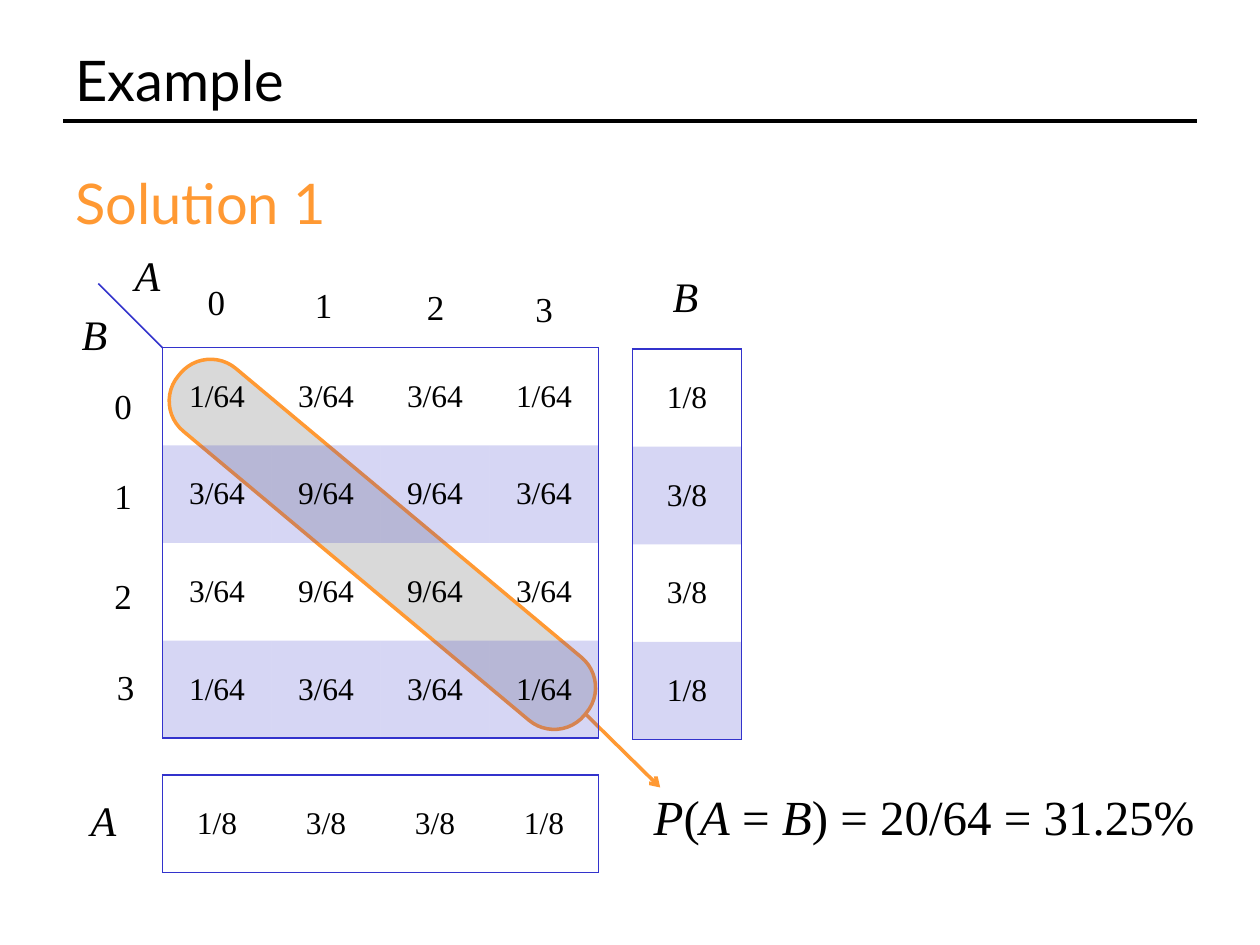
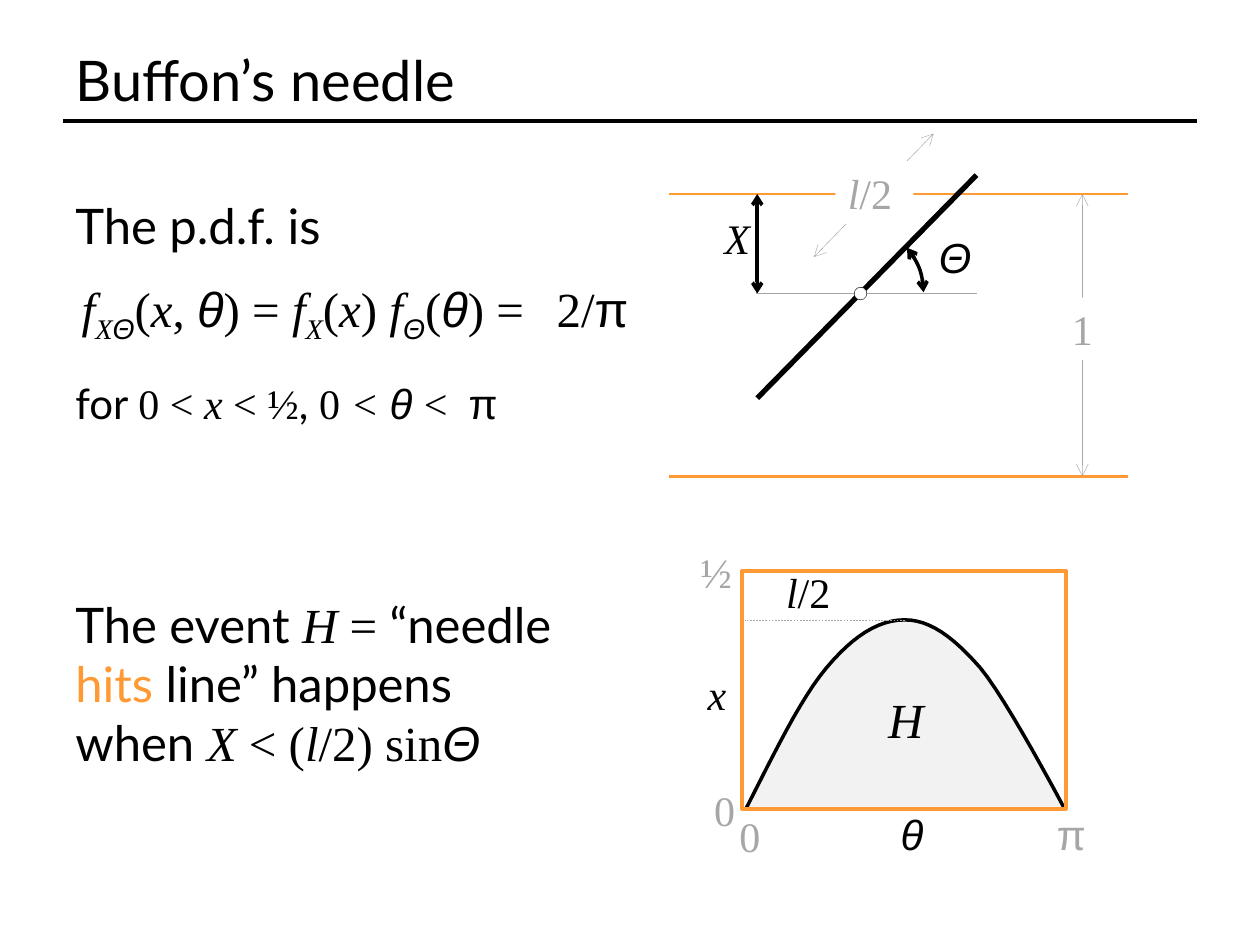
"""Build two probability slides: a joint table and Buffon's needle."""
from lxml.etree import SubElement
from pptx import Presentation
from pptx.dml.color import RGBColor
from pptx.enum.dml import MSO_LINE
from pptx.enum.shapes import MSO_CONNECTOR, MSO_SHAPE
from pptx.enum.text import MSO_ANCHOR, PP_ALIGN
from pptx.oxml.ns import qn
from pptx.util import Inches, Pt

WIDE, HIGH = 10, 7.5
EDGE = WIDE * 0.05
COL, ROW = 3.46 / 4, 3.1 / 4
GRID = (1.29, 2.76)
BLACK, WHITE, GREY = "000000", "FFFFFF", "A6A6A6"
ORANGE, BLUE = "FF9933", "3333CC"
PLAIN = "{2D5ABB26-0587-4C30-8999-92F81FD0307C}"
FONTS = {"a": "Arial", "l": "Lato"}
TINTS = {"o": ORANGE, "g": GREY}
ALIGN = {"l": PP_ALIGN.LEFT, "c": PP_ALIGN.CENTER, "r": PP_ALIGN.RIGHT}

JOINT = [
    ["1/64", "3/64", "3/64", "1/64"],
    ["3/64", "9/64", "9/64", "3/64"],
    ["3/64", "9/64", "9/64", "3/64"],
    ["1/64", "3/64", "3/64", "1/64"],
]
EDGES = ["1/8", "3/8", "3/8", "1/8"]
HEADS = [(1.55, 2.18), (2.4, 2.2), (3.29, 2.22), (4.15, 2.23)]
SIDES = [(0.81, 3), (0.81, 3.72), (0.81, 4.51), (0.83, 5.23)]

# Runs pair text with flags: i italic, s subscript, a Arial, l Lato, o orange, g grey.
NOTES = [
    (EDGE, 1.29, 9, 0.64, "l", 32, [("Solution 1", "lo")]),
    (0.97, 1.93, 0.55, 0.5, "l", 24, [("A", "i")]),
    (0.55, 2.4, 0.47, 0.5, "l", 24, [("B", "i")]),
    (0.62, 6.26, 0.55, 0.5, "l", 24, [("A", "i")]),
    (5.24, 2.1, 0.47, 0.5, "l", 24, [("B", "i")]),
    (5.09, 6.19, 4.63, 0.57, "l", 28, [
        ("P", "i"), ("(", ""), ("A", "i"), (" = ", ""), ("B", "i"),
        (") = 20/64 = 31.25%", "")]),
]

PROSE = [
    (EDGE, 1.5, 4.53, 0.57, "l", 28, [("The p.d.f. is", "l")]),
    (0.55, 2.16, 3.89, 0.57, "l", 28, [
        ("f", "i"), ("X", "is"), ("Θ", "ias"), ("(", ""), ("x", "i"),
        (", ", ""), ("θ", "ia"), (") = ", ""), ("f", "i"), ("X", "is"),
        ("(", ""), ("x", "i"), (") ", ""), ("f", "i"), ("Θ", "ias"),
        ("(", ""), ("θ", "ia"), (") = ", "")]),
    (4.32, 2.16, 0.8, 0.57, "l", 28, [("2/", ""), ("π", "a")]),
    (EDGE, 2.95, 4.81, 0.5, "l", 24, [
        ("for ", "l"), ("0 < ", ""), ("x ", "i"), ("< ½", ""), (", ", "l"),
        ("0", ""), (" < ", "i"), ("θ ", "ia"), ("<  ", ""), ("π", "a")]),
    (EDGE, 4.67, 4.53, 1.51, "l", 28, [
        ("The event ", "l"), ("H", "i"), (" = ", ""), ("“needle ", "l"),
        ("\n", ""), ("hits ", "lo"), ("line” happens ", "l"), ("\n", ""),
        ("when ", "l"), ("X", "i"), (" < (", ""), ("l", "i"),
        ("/2) sin", ""), ("Θ", "ia")]),
]
MASKS = [
    (8.41, 2.36, 0.36, 0.5, "l", 24, [("1", "g")]),
    (6.63, 1.28, 0.62, 0.5, "l", 24, [("l", "ig"), ("/2", "g")]),
]
MARKS = [
    (5.52, 1.64, 0.53, 0.5, "r", 24, [("X", "i")]),
    (7.23, 1.79, 0.58, 0.5, "r", 24, [("Θ", "ia")]),
    (7.05, 6.37, 0.44, 0.5, "l", 24, [("θ", "ia")]),
    (5.49, 5.26, 0.4, 0.5, "c", 24, [("x", "i")]),
    (5.77, 6.38, 0.37, 0.37, "l", 24, [("0", "g")]),
    (8.29, 6.37, 0.39, 0.5, "l", 24, [("π", "ag")]),
    (5.46, 4.29, 0.48, 0.5, "l", 24, [("½", "g")]),
    (5.57, 6.18, 0.37, 0.37, "l", 24, [("0", "g")]),
    (6.95, 5.42, 0.55, 0.57, "l", 28, [("H", "i")]),
    (6.14, 4.45, 0.62, 0.5, "l", 24, [("l", "i"), ("/2", "")]),
]
LINES = [
    (5.31, 1.54, 8.95, 1.54, ORANGE, 1.5, ()),
    (5.31, 3.78, 8.95, 3.78, ORANGE, 1.5, ()),
    (6.01, 3.16, 7.75, 1.39, BLACK, 3, ()),
    (6.01, 1.54, 6.01, 2.33, BLACK, 2, ("head", "tail")),
    (8.59, 1.54, 8.59, 3.78, GREY, 0.25, ("head", "tail")),
    (7.41, 1.06, 6.46, 2.04, GREY, 0.25, ("head", "tail")),
    (7.75, 2.33, 6, 2.33, GREY, 0.25, ()),
]
CURVE = [
    [(5.92, 6.42), (6.14, 5.99), (6.35, 5.55), (6.56, 5.3)],
    [(6.56, 5.3), (6.77, 5.05), (6.97, 4.92), (7.18, 4.92)],
    [(7.18, 4.92), (7.38, 4.92), (7.56, 5.05), (7.78, 5.3)],
    [(7.78, 5.3), (7.99, 5.55), (8.45, 6.42), (8.45, 6.42)],
]


def tint(code):
    return RGBColor.from_string(code)


def box(*spans):
    return [Inches(span) for span in spans]


def write(para, runs, size):
    for text, flags in runs:
        if text == "\n":
            para.add_line_break()
            continue
        run = para.add_run()
        run.text = text
        font = run.font
        font.size = Pt(size)
        font.italic = "i" in flags
        font.name = next((FONTS[f] for f in flags if f in FONTS), "Times New Roman")
        font.color.rgb = tint(next((TINTS[f] for f in flags if f in TINTS), BLACK))
        if "s" in flags:
            font._element.set("baseline", "-25000")


def label(slide, x, y, w, h, align, size, runs, fill=None):
    note = slide.shapes.add_textbox(*box(x, y, w, h))
    note.text_frame.word_wrap = True
    if fill:
        note.fill.solid()
        note.fill.fore_color.rgb = tint(fill)
    para = note.text_frame.paragraphs[0]
    para.alignment = ALIGN[align]
    write(para, runs, size)


def tips(shape, ends):
    for end in ends:
        SubElement(shape.line._get_or_add_ln(), qn(f"a:{end}End"), type="arrow")


def line(slide, x1, y1, x2, y2, color, width, ends=()):
    link = slide.shapes.add_connector(MSO_CONNECTOR.STRAIGHT, *box(x1, y1, x2, y2))
    link.line.color.rgb = tint(color)
    link.line.width = Pt(width)
    tips(link, ends)
    SubElement(link._element.spPr, qn("a:effectLst"))
    return link


def dress(shape, fill, color, width):
    shape.shadow.inherit = False
    if fill:
        shape.fill.solid()
        shape.fill.fore_color.rgb = tint(fill)
    else:
        shape.fill.background()
    shape.line.color.rgb = tint(color)
    shape.line.width = Pt(width)
    return shape


def form(slide, kind, place, fill, color, width):
    return dress(slide.shapes.add_shape(kind, *box(*place)), fill, color, width)


def border(cell, side):
    rule = SubElement(cell._tc.get_or_add_tcPr(), qn(f"a:ln{side}"), w="12700")
    SubElement(SubElement(rule, qn("a:solidFill")), qn("a:srgbClr"), val=BLUE)


def table(slide, x, y, data):
    rows, cols = len(data), len(data[0])
    frame = slide.shapes.add_table(rows, cols, *box(x, y, cols * COL, rows * ROW))
    grid = frame.table
    grid.first_row = grid.horz_banding = False
    grid._tbl.tblPr.find(qn("a:tableStyleId")).text = PLAIN
    for r, texts in enumerate(data):
        for c, text in enumerate(texts):
            cell = grid.cell(r, c)
            sides = {"L": c == 0, "R": c == cols - 1, "T": r == 0, "B": r == rows - 1}
            for side, outer in sides.items():
                if outer:
                    border(cell, side)
            if r % 2:
                cell.fill.solid()
                cell.fill.fore_color.rgb = tint(BLUE)
                code = cell._tc.tcPr.find(f"{qn('a:solidFill')}/{qn('a:srgbClr')}")
                SubElement(code, qn("a:alpha"), val="20000")
            else:
                cell.fill.background()
            cell.vertical_anchor = MSO_ANCHOR.MIDDLE
            para = cell.text_frame.paragraphs[0]
            para.alignment = PP_ALIGN.CENTER
            write(para, [(text, "")], 18)


def start(deck, title):
    slide = deck.slides.add_slide(deck.slide_layouts[5])
    head = slide.shapes.title
    head.left, head.top, head.width, head.height = box(EDGE, 0.3, WIDE - 2 * EDGE, 0.66)
    head.text_frame.vertical_anchor = MSO_ANCHOR.MIDDLE
    para = head.text_frame.paragraphs[0]
    para.alignment = PP_ALIGN.LEFT
    write(para, [(title, "l")], 32)
    line(slide, EDGE, 0.96, WIDE - EDGE, 0.96, BLACK, 2)
    return slide


def trace(knots, steps=12):
    for n in range(1, steps + 1):
        t = n / steps
        parts = ((1 - t) ** 3, 3 * t * (1 - t) ** 2, 3 * t * t * (1 - t), t ** 3)
        yield box(*(sum(p * k[i] for p, k in zip(parts, knots)) for i in (0, 1)))


def joint(deck):
    slide = start(deck, "Example")
    pill = form(slide, MSO_SHAPE.ROUNDED_RECTANGLE, (2.71, 2.22, 0.65, 4.2),
                "D9D9D9", ORANGE, 2)
    pill.adjustments[0] = 0.48
    pill.rotation = 309.9
    arrow = line(slide, 4.64, 5.66, 5.24, 6.25, ORANGE, 2, ["tail"])
    arrow.begin_connect(pill, 2)
    arrow.begin_x, arrow.begin_y = box(4.64, 5.66)
    x, y = GRID
    table(slide, x, y, JOINT)
    table(slide, x, 6.15, [EDGES])
    table(slide, 5.02, y + 0.01, [[text] for text in EDGES])
    line(slide, x, y, x - 0.51, y - 0.51, BLUE, 1)
    for spots in (HEADS, SIDES):
        for n, (left, top) in enumerate(spots):
            label(slide, left, top, 0.33, 0.44, "c", 20, [(str(n), "")])
    for note in NOTES:
        label(slide, *note)


def needle(deck):
    slide = start(deck, "Buffon’s needle")
    for item in LINES:
        line(slide, *item)
    form(slide, MSO_SHAPE.OVAL, (6.78, 2.28, 0.1, 0.1), WHITE, BLACK, 0.25)
    arc = form(slide, MSO_SHAPE.ARC, (6.22, 1.77, 1.11, 1.11), None, BLACK, 2)
    for n, angle in enumerate((319.75, 359.5)):
        arc.adjustments[n] = angle * 0.6
    tips(arc, ("head", "tail"))
    pen = slide.shapes.build_freeform(*box(*CURVE[0][0]))
    pen.add_line_segments([dot for knots in CURVE for dot in trace(knots)], close=False)
    dress(pen.convert_to_shape(), "F2F2F2", BLACK, 2)
    form(slide, MSO_SHAPE.RECTANGLE, (5.89, 4.53, 2.57, 1.89), None, ORANGE, 2)
    peak = line(slide, 7.18, 4.92, 5.91, 4.92, GREY, 0.25)
    peak.line.dash_style = MSO_LINE.DASH
    for note in MASKS:
        label(slide, *note, fill=WHITE)
    for note in PROSE + MARKS:
        label(slide, *note)


def main():
    deck = Presentation()
    deck.slide_width, deck.slide_height = box(WIDE, HIGH)
    joint(deck)
    needle(deck)
    deck.save("out.pptx")


if __name__ == "__main__":
    main()
